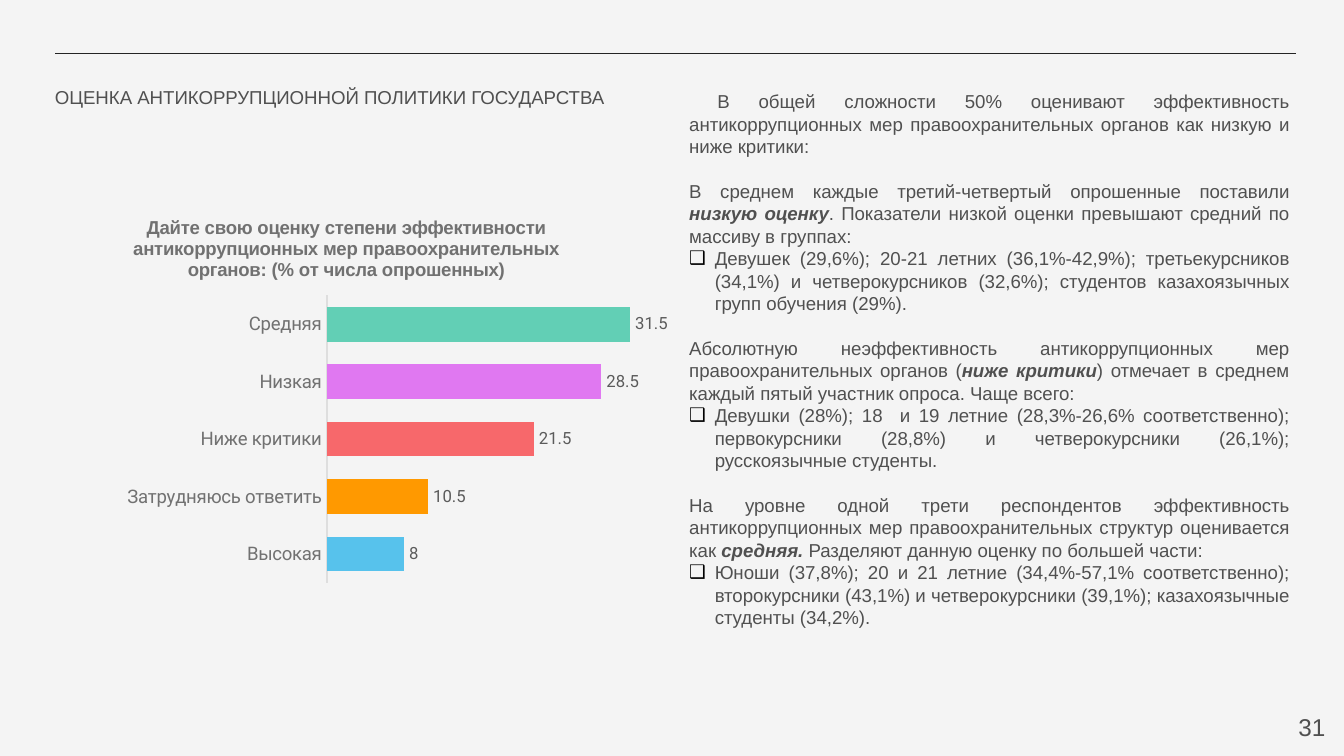
"""Builds a slide with a survey bar chart and its commentary."""
from lxml import etree
from pptx import Presentation, util as u
from pptx.chart.data import CategoryChartData
from pptx.dml.color import RGBColor
from pptx.enum import chart as charts, shapes, text
from pptx.oxml import ns

GREY = "505050"
ANSWERS = [
    ("Высокая", 8, "57C2EC"),
    ("Затрудняюсь ответить", 10.5, "FF9900"),
    ("Ниже критики", 21.5, "F7686B"),
    ("Низкая", 28.5, "E078F1"),
    ("Средняя", 31.5, "62CFB5"),
]
QUESTION = ("Дайте свою оценку степени эффективности антикоррупционных мер "
            "правоохранительных органов: (% от числа опрошенных)")
INTRO = ("В общей сложности 50% оценивают эффективность антикоррупционных мер "
         "правоохранительных органов как низкую и ниже критики:")
FINDINGS = [
    (("В среднем каждые третий-четвертый опрошенные поставили ", "низкую оценку",
      ". Показатели низкой оценки превышают средний по массиву в группах:"),
     "Девушек (29,6%); 20-21 летних (36,1%-42,9%); третьекурсников (34,1%) и "
     "четверокурсников (32,6%); студентов казахоязычных групп обучения (29%)."),
    (("Абсолютную неэффективность антикоррупционных мер правоохранительных органов (",
      "ниже критики", ") отмечает в среднем каждый пятый участник опроса. Чаще всего:"),
     "Девушки (28%); 18  и 19 летние (28,3%-26,6% соответственно); первокурсники "
     "(28,8%) и четверокурсники (26,1%); русскоязычные студенты."),
    (("На уровне одной трети респондентов эффективность антикоррупционных мер "
      "правоохранительных структур оценивается как ", "средняя. ",
      "Разделяют данную оценку по большей части:"),
     "Юноши (37,8%); 20 и 21 летние (34,4%-57,1% соответственно); второкурсники "
     "(43,1%) и четверокурсники (39,1%); казахоязычные студенты (34,2%)."),
]


def color(value):
    return RGBColor.from_string(value)


def set_font(font, size, value, name="Arial", bold=False):
    font.size, font.name, font.bold = u.Pt(size), name, bold
    font.color.rgb = color(value)


def set_layout(parent, index, **places):
    for old in parent.findall(ns.qn("c:layout")):
        parent.remove(old)
    layout = etree.Element(ns.qn("c:layout"))
    manual = etree.SubElement(layout, ns.qn("c:manualLayout"))
    for tag, value in places.items():
        etree.SubElement(manual, ns.qn(f"c:{tag}")).set("val", str(value))
    parent.insert(index, layout)


class SlideBuilder:
    def __init__(self, slide):
        self.slide = slide
        fill = slide.background.fill
        fill.solid()
        fill.fore_color.rgb = color("F4F4F4")

    def rule(self, left, top, right):
        line = self.slide.shapes.add_connector(
            shapes.MSO_CONNECTOR.STRAIGHT, *map(u.Inches, (left, top, right, top)))
        line.line.color.rgb = color("242424")
        line.line.width = u.Pt(0.75)
        etree.SubElement(line._element.spPr, ns.qn("a:effectLst"))

    def text_box(self, place, anchor=text.MSO_ANCHOR.TOP):
        frame = self.slide.shapes.add_textbox(*map(u.Inches, place)).text_frame
        frame.word_wrap = True
        frame.vertical_anchor = anchor
        frame.margin_left = frame.margin_right = u.Inches(0.1)
        frame.margin_top = frame.margin_bottom = u.Inches(0.1)
        return frame

    def label(self, place, words, size, align, anchor=text.MSO_ANCHOR.TOP, spacing=1.0):
        para = self.text_box(place, anchor).paragraphs[0]
        para.text = words
        para.alignment = align
        para.line_spacing = spacing
        set_font(para.runs[0].font, size, GREY)

    def body_para(self, para, spans, before=0, margin=0, indent=0, bullet=None):
        para.alignment = text.PP_ALIGN.JUSTIFY
        para.space_before = u.Pt(before)
        props = para._p.get_or_add_pPr()
        props.set("marL", str(u.Inches(margin)))
        props.set("indent", str(u.Inches(indent)))
        if bullet:
            tint = etree.SubElement(props, ns.qn("a:buClr"))
            etree.SubElement(tint, ns.qn("a:srgbClr")).set("val", "000000")
            etree.SubElement(props, ns.qn("a:buFont")).set("typeface", "Arial")
            etree.SubElement(props, ns.qn("a:buChar")).set("char", bullet)
        for number, words in enumerate(spans):
            span = para.add_run()
            span.text = words
            strong = number == 1
            set_font(span.font, 10, GREY, bold=strong)
            span.font.italic = strong

    def commentary(self, place):
        frame = self.text_box(place)
        self.body_para(frame.paragraphs[0], [INTRO], indent=0.21)
        for summary, groups in FINDINGS:
            self.body_para(frame.add_paragraph(), summary, before=12)
            self.body_para(frame.add_paragraph(), [groups],
                           margin=0.19, indent=-0.19, bullet="❑")

    def bar_chart(self, place):
        names, values, tints = zip(*ANSWERS)
        data = CategoryChartData()
        data.categories = names
        data.add_series("Series 1", values)
        chart = self.slide.shapes.add_chart(
            charts.XL_CHART_TYPE.BAR_CLUSTERED, *map(u.Inches, place), data).chart
        set_font(chart.font, 10, "242424")
        chart.has_legend = False

        chart.has_title = True
        title = chart.chart_title
        title.include_in_layout = False
        title.text_frame.text = QUESTION
        set_font(title.text_frame.paragraphs[0].runs[0].font, 10, "717171", bold=True)
        set_layout(title._element, 1, xMode="edge", yMode="edge", x=0.16, y=0.04)
        set_layout(chart._chartSpace.chart.plotArea, 0, layoutTarget="inner",
                   xMode="edge", yMode="edge", x=0.47, y=0.22, w=0.53, h=0.62)

        axis = chart.category_axis
        axis.major_tick_mark = charts.XL_TICK_MARK.NONE
        axis.format.line.color.rgb = color("DEDEDE")
        axis.format.line.width = u.Pt(0.75)
        set_font(axis.tick_labels.font, 10, "717171", "Roboto")
        scale = chart.value_axis
        scale.minimum_scale, scale.maximum_scale = 0, 35
        scale.has_major_gridlines = False
        scale.visible = False

        plot = chart.plots[0]
        plot.gap_width = 66
        plot.vary_by_categories = False
        series = plot.series[0]
        series.format.fill.solid()
        series.format.fill.fore_color.rgb = color(tints[-1])
        for number, tint in enumerate(tints):
            fill = series.points[number].format.fill
            fill.solid()
            fill.fore_color.rgb = color(tint)
        labels = series.data_labels
        labels.show_value = True
        labels.position = charts.XL_LABEL_POSITION.OUTSIDE_END
        set_font(labels.font, 9, "5B5B5B", "Roboto")


def main():
    deck = Presentation()
    deck.slide_width = u.Inches(10)
    deck.slide_height = deck.slide_width * 9 // 16
    page = SlideBuilder(deck.slides.add_slide(deck.slide_layouts[6]))
    page.rule(0.41, 0.4, 9.64)
    page.label((9.36, 5.19, 0.6, 0.43), "31", 13,
               text.PP_ALIGN.RIGHT, text.MSO_ANCHOR.MIDDLE)
    page.commentary((5.03, 0.57, 4.66, 4.69))
    page.label((0.31, 0.52, 4.41, 0.71), "ОЦЕНКА АНТИКОРРУПЦИОННОЙ ПОЛИТИКИ ГОСУДАРСТВА",
               10, text.PP_ALIGN.LEFT, spacing=1.15)
    page.bar_chart((0.21, 1.44, 4.76, 3.45))
    deck.save("out.pptx")


if __name__ == "__main__":
    main()
